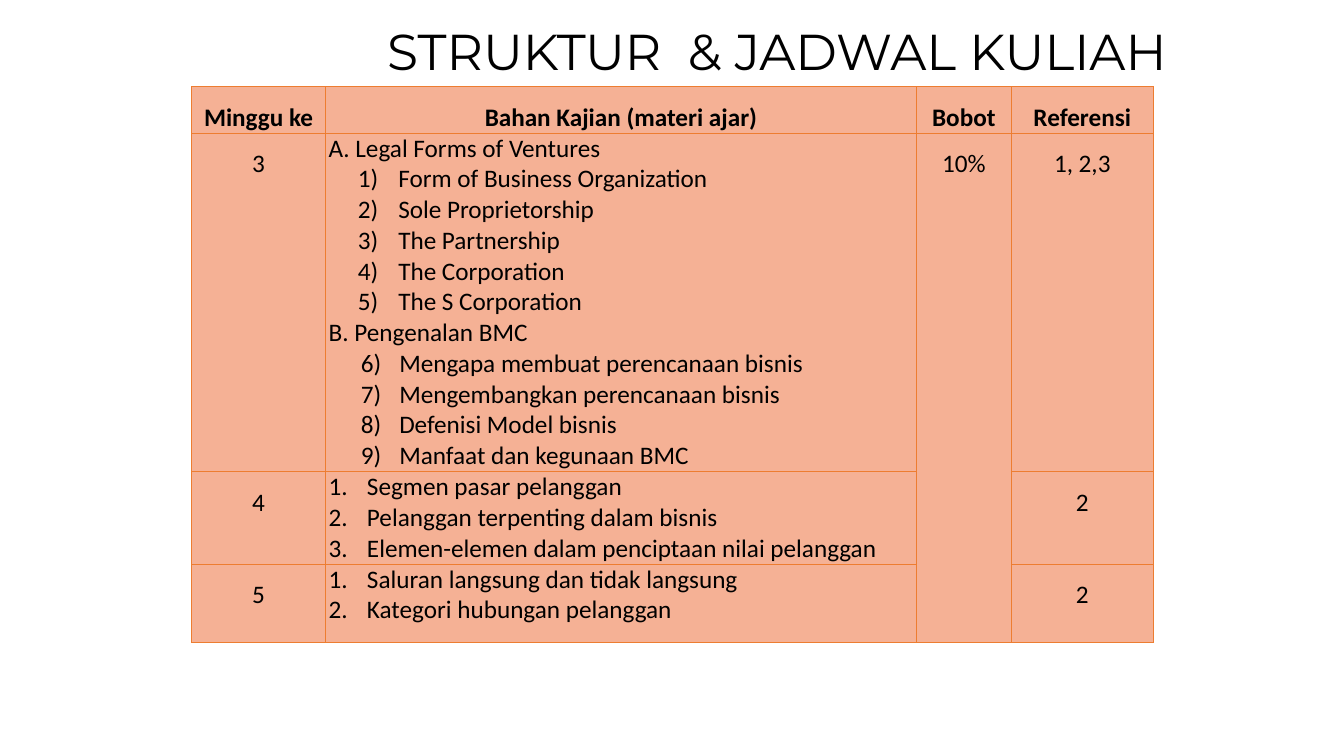
from lxml import etree
from pptx import Presentation
from pptx import util as u
from pptx.dml.color import RGBColor
from pptx.enum import text
from pptx.oxml import parse_xml
from pptx.oxml.ns import qn

BLACK = RGBColor(0x00, 0x00, 0x00)
PEACH = RGBColor(0xF5, 0xB1, 0x95)
ORANGE = RGBColor(0xED, 0x7D, 0x31)
PX = 9144  # EMU per px, 100 px to the inch
NS = "http://schemas.openxmlformats.org/drawingml/2006/main"

# List levels: left indent, hanging indent, numbering scheme, first number
LEVELS = {
    "plain": (0, 0, None, 1),
    "forms": (69, 40, "arabicParenR", 1),
    "canvas": (70, 38, "arabicParenR", 6),
    "topics": (38, 38, "arabicPeriod", 1),
}

HEADINGS = ["Minggu ke", "Bahan Kajian (materi ajar)", "Bobot", "Referensi"]
WEEKS = [
    ("3", [
        ("plain", ["A. Legal Forms of Ventures"]),
        ("forms", ["Form of Business Organization", "Sole Proprietorship",
                   "The Partnership", "The Corporation", "The S Corporation"]),
        ("plain", ["B. Pengenalan BMC"]),
        ("canvas", ["Mengapa membuat perencanaan bisnis",
                    "Mengembangkan perencanaan bisnis",
                    "Defenisi Model bisnis", "Manfaat dan kegunaan BMC"]),
    ], "10%", "1, 2,3"),
    ("4", [("topics", ["Segmen pasar pelanggan",
                       "Pelanggan terpenting dalam bisnis",
                       "Elemen-elemen dalam penciptaan nilai pelanggan"])],
     None, "2"),
    ("5", [("topics", ["Saluran langsung dan tidak langsung",
                       "Kategori hubungan pelanggan"])], None, "2"),
]
COLUMNS = [133, 586, 94, 141]
ROWS = [46, 336, 91, 78]


class Deck:
    def __init__(self, width, height):
        self.prs = Presentation()
        self.prs.slide_width, self.prs.slide_height = width * PX, height * PX
        self.slide = self.prs.slides.add_slide(self.prs.slide_layouts[5])

    def run(self, paragraph, words, font, size, bold=False):
        run = paragraph.add_run()
        run.text = words
        run.font.name, run.font.size, run.font.bold = font, u.Pt(size), bold
        run.font.color.rgb = BLACK

    def title(self, words, left, top, width, height):
        title = self.slide.shapes.title
        title.left, title.top = left * PX, top * PX
        title.width, title.height = width * PX, height * PX
        frame = title.text_frame
        frame.word_wrap = True
        frame.auto_size = text.MSO_AUTO_SIZE.NONE
        frame.vertical_anchor = text.MSO_ANCHOR.TOP
        heading = frame.paragraphs[0]
        heading.alignment = text.PP_ALIGN.RIGHT
        heading.line_spacing = 1.25
        self.run(heading, words, "Montserrat", 36)

    def table(self, left, top, columns, rows):
        frame = self.slide.shapes.add_table(
            len(rows), len(columns), left * PX, top * PX,
            sum(columns) * PX, sum(rows) * PX)
        table = frame.table
        table.first_row = table.horz_banding = False
        for column, width in zip(table.columns, columns):
            column.width = width * PX
        for row, height in zip(table.rows, rows):
            row.height = height * PX
        for cell in table.iter_cells():
            self.cell_style(cell)
        return table

    def cell_style(self, cell):
        cell.margin_left = cell.margin_right = 3 * PX
        cell.margin_top = cell.margin_bottom = 0
        properties = cell._tc.get_or_add_tcPr()
        for side in ("lnL", "lnR", "lnT", "lnB"):
            properties.append(parse_xml(
                f'<a:{side} xmlns:a="{NS}" w="{u.Pt(0.5)}"><a:solidFill>'
                f'<a:srgbClr val="{ORANGE}"/></a:solidFill></a:{side}>'))
        cell.fill.solid()
        cell.fill.fore_color.rgb = PEACH

    def centred(self, cell, words, bold=False):
        paragraph = cell.text_frame.paragraphs[0]
        paragraph.alignment = text.PP_ALIGN.CENTER
        paragraph.line_spacing = 1.5
        self.run(paragraph, words, "Calibri", 18, bold)

    def outline(self, cell, groups):
        lines = [(level, line) for level, group in groups for line in group]
        frame = cell.text_frame
        for i, (level, line) in enumerate(lines):
            paragraph = frame.add_paragraph() if i else frame.paragraphs[0]
            indent, hanging, scheme, start = LEVELS[level]
            if scheme:
                properties = paragraph._p.get_or_add_pPr()
                properties.set("marL", str(indent * PX))
                properties.set("indent", str(-hanging * PX))
                number = etree.SubElement(properties, qn("a:buAutoNum"))
                number.set("type", scheme)
                if start > 1:
                    number.set("startAt", str(start))
            self.run(paragraph, line, "Calibri", 18)


def main():
    deck = Deck(1333, 750)

    # Schedule table
    schedule = deck.table(190, 86, COLUMNS, ROWS)
    for column, heading in enumerate(HEADINGS):
        cell = schedule.cell(0, column)
        cell.vertical_anchor = text.MSO_ANCHOR.MIDDLE
        deck.centred(cell, heading, bold=True)

    # Weeks, with one weight shared by all of them
    schedule.cell(1, 2).merge(schedule.cell(3, 2))
    for row, (week, topics, weight, reference) in enumerate(WEEKS, 1):
        deck.centred(schedule.cell(row, 0), week)
        deck.outline(schedule.cell(row, 1), topics)
        if weight:
            deck.centred(schedule.cell(row, 2), weight)
        deck.centred(schedule.cell(row, 3), reference)

    # Title
    deck.title("STRUKTUR  & JADWAL KULIAH", 167, 0, 1000, 70)
    deck.prs.save("out.pptx")


if __name__ == "__main__":
    main()
